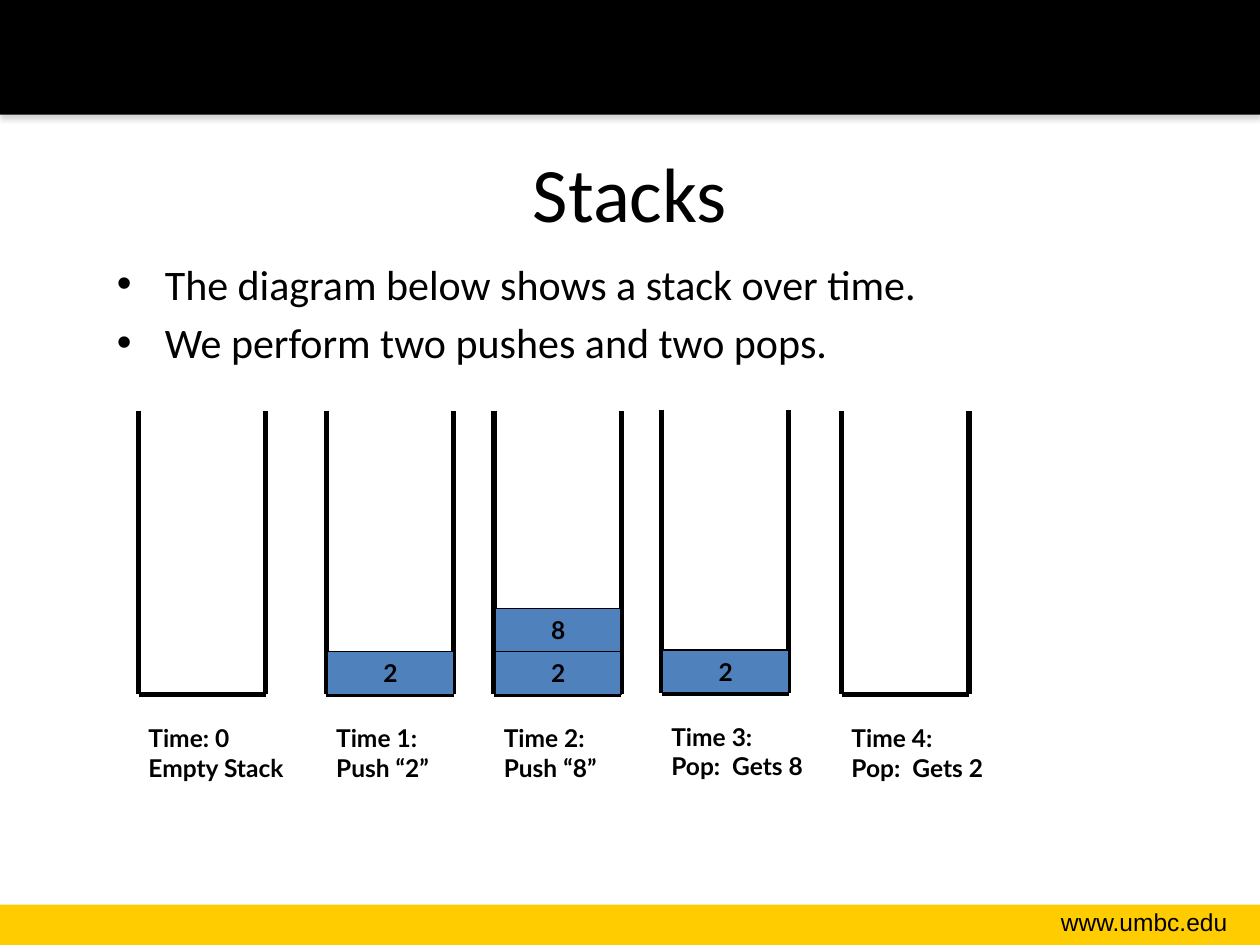
from lxml import etree
from pptx import Presentation, util as u
from pptx.dml.color import RGBColor
from pptx.enum import shapes, text
from pptx.oxml.ns import qn

# Content
TITLE = "Stacks"
BULLETS = ["The diagram below shows a stack over time.",
           "We perform two pushes and two pops."]
SITE = "www.umbc.edu"
# left edge, vertical shift, values from the bottom up, caption lines
STACKS = [
    (1.10, 0, [], ["Time: 0", "Empty Stack"]),
    (2.59, 0, ["2"], ["Time 1:", "Push “2”"]),
    (3.92, 0, ["2", "8"], ["Time 2:", "Push “8”"]),
    (5.25, -0.01, ["2"], ["Time 3:", "Pop:  Gets 8"]),
    (6.68, 0, [], ["Time 4:", "Pop:  Gets 2"]),
]
COLORS = {"black": "000000", "gold": "FFCC00", "blue": "4F81BD", "shadow": "808080"}

# Layout, in inches
WIDTH, HEIGHT = 10, 7.5
HEADER_H, FOOTER_H = 0.91, 0.32
STACK_TOP, STACK_BOTTOM, STACK_W = 3.26, 5.51, 1.01
ITEM_W, ITEM_H = 1, 0.34
CAPTION_GAP, CAPTION_W, CAPTION_H = 0.18, 1.33, 0.68


def color(name):
    return RGBColor.from_string(COLORS[name])


def inches(*values):
    return [u.Inches(v) for v in values]


def write(frame, lines, size, font, align, bold=False):
    for i, line in enumerate(lines):
        para = frame.paragraphs[0] if i == 0 else frame.add_paragraph()
        para.alignment = align
        run = para.add_run()
        run.text = line
        run.font.size, run.font.name, run.font.bold = u.Pt(size), font, bold
        run.font.color.rgb = color("black")


def add_text(parent, box, *style, **options):
    frame = parent.add_textbox(*inches(*box)).text_frame
    frame.word_wrap = True
    write(frame, *style, **options)
    return frame


def add_rect(parent, box, fill):
    rect = parent.add_shape(shapes.MSO_SHAPE.RECTANGLE, *inches(*box))
    rect.shadow.inherit = False
    rect.fill.solid()
    rect.fill.fore_color.rgb = color(fill)
    rect.line.fill.background()
    return rect


def add_wall(parent, start, end):
    wall = parent.add_connector(shapes.MSO_CONNECTOR.STRAIGHT, *inches(*start, *end))
    wall.line.width = u.Pt(3)
    wall.line.color.rgb = color("black")
    etree.SubElement(wall._element.spPr, qn("a:effectLst"))


def add_stack(slide, left, shift, values, caption):
    group = slide.shapes.add_group_shape().shapes
    top, bottom, right = STACK_TOP + shift, STACK_BOTTOM + shift, left + STACK_W
    corners = [(left, top), (left, bottom), (right, bottom), (right, top)]
    for start, end in zip(corners, corners[1:]):
        add_wall(group, start, end)
    add_text(group, (left - 0.02, bottom + CAPTION_GAP, CAPTION_W, CAPTION_H),
             caption, 14, "Lato", text.PP_ALIGN.LEFT, bold=True)
    for level, value in enumerate(values, 1):
        item = add_rect(group, (left + 0.01, bottom - level * ITEM_H, ITEM_W, ITEM_H), "blue")
        item.line.width = u.Pt(0.75)
        item.line.color.rgb = color("black")
        item.text_frame.vertical_anchor = text.MSO_ANCHOR.MIDDLE
        write(item.text_frame, [value], 14, "Lato", text.PP_ALIGN.CENTER, bold=True)


def main():
    deck = Presentation()
    deck.slide_width, deck.slide_height = inches(WIDTH, HEIGHT)
    slide = deck.slides.add_slide(deck.slide_layouts[5])

    # Footer and header bars
    add_rect(slide.shapes, (0, HEIGHT - FOOTER_H, WIDTH, FOOTER_H), "gold")
    header = add_rect(slide.shapes, (0, 0, WIDTH, HEADER_H), "black")
    shadow = etree.SubElement(
        header._element.spPr.find(qn("a:effectLst")), qn("a:outerShdw"),
        blurRad=str(u.Pt(3.1)), dist=str(u.Pt(1.8)), dir="5400000", rotWithShape="0")
    tint = etree.SubElement(shadow, qn("a:srgbClr"), val=COLORS["shadow"])
    etree.SubElement(tint, qn("a:alpha"), val="35000")
    add_text(slide.shapes, (7.85, 7.15, 1.99, 0.34), [SITE], 14, "Arial",
             text.PP_ALIGN.RIGHT)

    # Title
    title = slide.shapes.title
    title.left, title.top, title.width, title.height = inches(0.5, 0.9, 9, 1.25)
    title.text_frame.vertical_anchor = text.MSO_ANCHOR.MIDDLE
    write(title.text_frame, [TITLE], 44, "Calibri", text.PP_ALIGN.CENTER)

    # Bullets
    body = add_text(slide.shapes, (0.83, 2, 8.5, 1.1), BULLETS, 24, "Calibri",
                    text.PP_ALIGN.LEFT)
    for i, para in enumerate(body.paragraphs):
        props = para._p.get_or_add_pPr()
        indent = u.Inches(0.38)
        props.set("marL", str(indent))
        props.set("indent", str(-indent))
        etree.SubElement(props, qn("a:buFont"), typeface="Arial")
        etree.SubElement(props, qn("a:buChar"), char="•")
        if i:
            para.space_before = u.Pt(4.8)

    # Stack at each time
    for stack in STACKS:
        add_stack(slide, *stack)

    deck.save("out.pptx")


if __name__ == "__main__":
    main()
